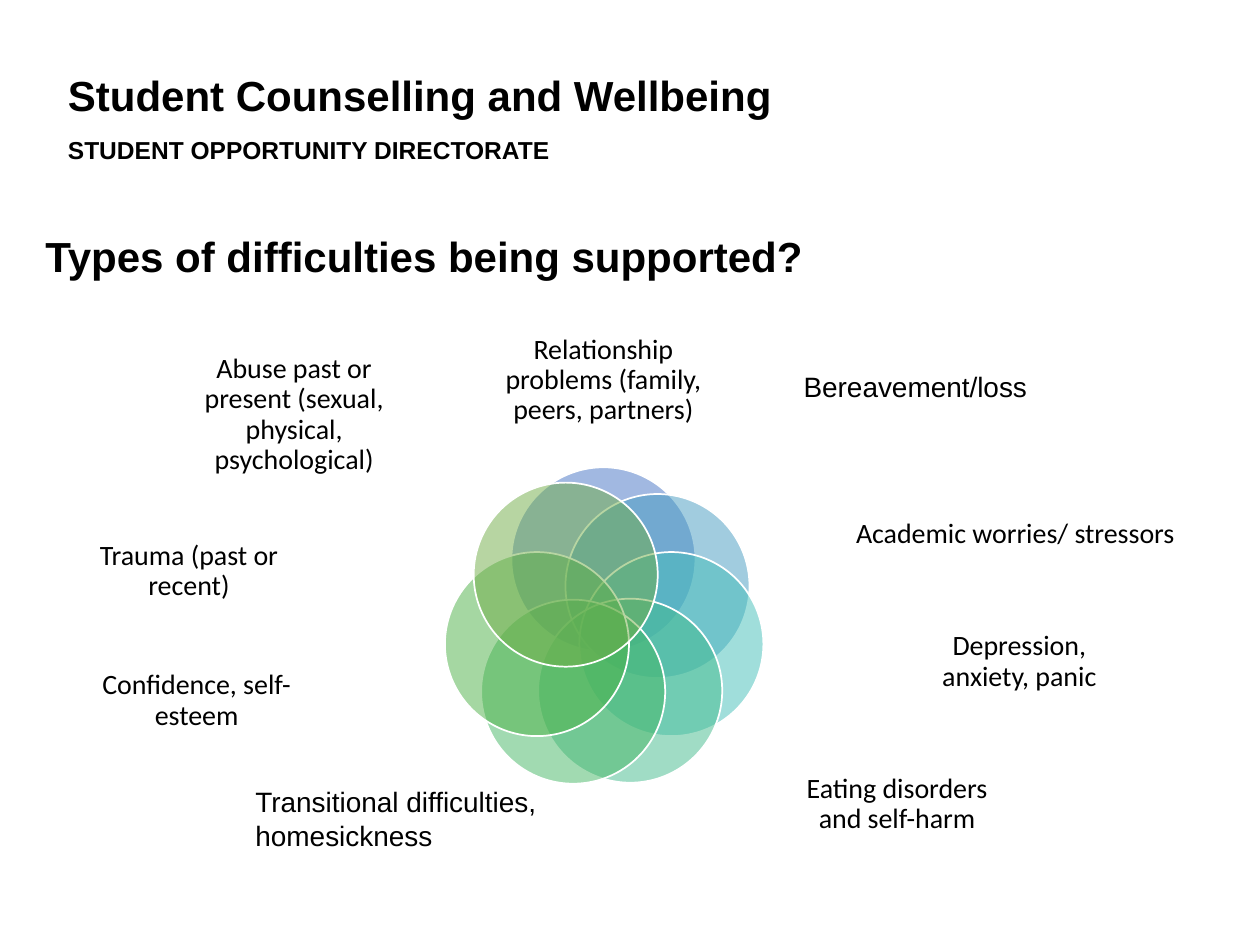
import pptx
import pptx.dml.color
import pptx.enum.shapes
import pptx.enum.text
import pptx.oxml.ns
import pptx.util
from lxml import etree

Cm = pptx.util.Cm
Pt = pptx.util.Pt
RGBColor = pptx.dml.color.RGBColor
PP_ALIGN = pptx.enum.text.PP_ALIGN
MSO_ANCHOR = pptx.enum.text.MSO_ANCHOR

BLACK = RGBColor(0x00, 0x00, 0x00)
WHITE = RGBColor(0xFF, 0xFF, 0xFF)
BLUE = RGBColor(0x44, 0x72, 0xC4)
SKY = RGBColor(0x44, 0x9B, 0xC1)
TURQUOISE = RGBColor(0x43, 0xBE, 0xB9)
TEAL = RGBColor(0x43, 0xBB, 0x8D)
EMERALD = RGBColor(0x45, 0xB6, 0x64)
GREEN = RGBColor(0x4C, 0xB1, 0x46)
OLIVE = RGBColor(0x70, 0xAD, 0x47)

DIAMETER = 3.71

# Circle colour, circle left and top, label text, label box (all in cm)
PETALS = [
    (BLUE, (10.31, 9.42), "Relationship problems (family, peers, partners)",
     (10.03, 6.53, 4.27, 2.29)),
    (SKY, (11.4, 9.96), "Academic worries/ stressors",
     (17.09, 10.16, 6.76, 1.24)),
    (TURQUOISE, (11.68, 11.13), "Depression, anxiety, panic",
     (18.57, 12.01, 3.96, 2.67)),
    (TEAL, (10.85, 12.07), "Eating disorders and self-harm",
     (15.95, 14.99, 4.27, 2.46)),
    (EMERALD, (9.7, 12.09), "Confidence, self-esteem",
     (1.83, 12.9, 4.27, 2.46)),
    (GREEN, (8.97, 11.13), "Trauma (past or recent)",
     (1.83, 10.19, 3.96, 2.67)),
    (OLIVE, (9.55, 9.73), "Abuse past or present (sexual, physical, psychological)",
     (3.91, 7.11, 4.04, 2.51)),
]

EXTRA_LABELS = [
    ("Bereavement/loss", (15.95, 7.32, 5.54, 0.94)),
    ("Transitional difficulties, homesickness", (4.9, 15.7, 8.53, 1.63)),
]


def write(p, text, size=16, font="Arial", bold=False, align=PP_ALIGN.LEFT,
          line_spacing=1.0, space_before=0):
    p.alignment = align
    p.line_spacing = line_spacing
    p.space_before = Pt(space_before)
    r = p.add_run()
    r.text = text
    r.font.size = Pt(size)
    r.font.name = font
    r.font.bold = bold
    r.font.color.rgb = BLACK


def add_box(s, box):
    tf = s.shapes.add_textbox(*map(Cm, box)).text_frame
    tf.word_wrap = True
    return tf


def add_header(s):
    tf = add_box(s, (1.12, 1.4, 16.15, 2.31))
    write(tf.paragraphs[0], "Student Counselling and Wellbeing",
          size=24, bold=True, line_spacing=0.9)
    write(tf.add_paragraph(), "STUDENT OPPORTUNITY DIRECTORATE",
          size=14, bold=True, line_spacing=0.9, space_before=10)


def set_title(s, text):
    sp = s.shapes.title
    sp.left, sp.top, sp.width, sp.height = map(Cm, (0.66, 4.52, 16.21, 1.3))
    tf = sp.text_frame
    tf.vertical_anchor = MSO_ANCHOR.TOP
    tf.auto_size = pptx.enum.text.MSO_AUTO_SIZE.NONE
    write(tf.paragraphs[0], text, size=24, bold=True)


def add_circle(s, left, top, color):
    """Draw one half-transparent petal with a white outline."""
    sp = s.shapes.add_shape(pptx.enum.shapes.MSO_SHAPE.OVAL, Cm(left), Cm(top),
                            Cm(DIAMETER), Cm(DIAMETER))
    sp.shadow.inherit = False
    sp.fill.solid()
    sp.fill.fore_color.rgb = color
    qn = pptx.oxml.ns.qn
    clr = sp.fill._xPr.find(qn("a:solidFill")).find(qn("a:srgbClr"))
    etree.SubElement(clr, qn("a:alpha"), val="50000")
    sp.line.color.rgb = WHITE
    sp.line.width = Pt(1)


def add_petal_label(s, text, box):
    tf = add_box(s, box)
    tf.margin_left = tf.margin_right = tf.margin_top = tf.margin_bottom = 0
    tf.vertical_anchor = MSO_ANCHOR.MIDDLE
    write(tf.paragraphs[0], text, font="Calibri", align=PP_ALIGN.CENTER,
          line_spacing=0.9)


def main():
    prs = pptx.Presentation()
    prs.slide_width, prs.slide_height = Cm(25.4), Cm(19.05)
    s = prs.slides.add_slide(prs.slide_layouts[5])
    add_header(s)
    set_title(s, "Types of difficulties being supported?")
    for color, corner, text, box in PETALS:
        add_circle(s, *corner, color)
        add_petal_label(s, text, box)
    for text, box in EXTRA_LABELS:
        write(add_box(s, box).paragraphs[0], text)
    prs.save("out.pptx")


if __name__ == "__main__":
    main()
